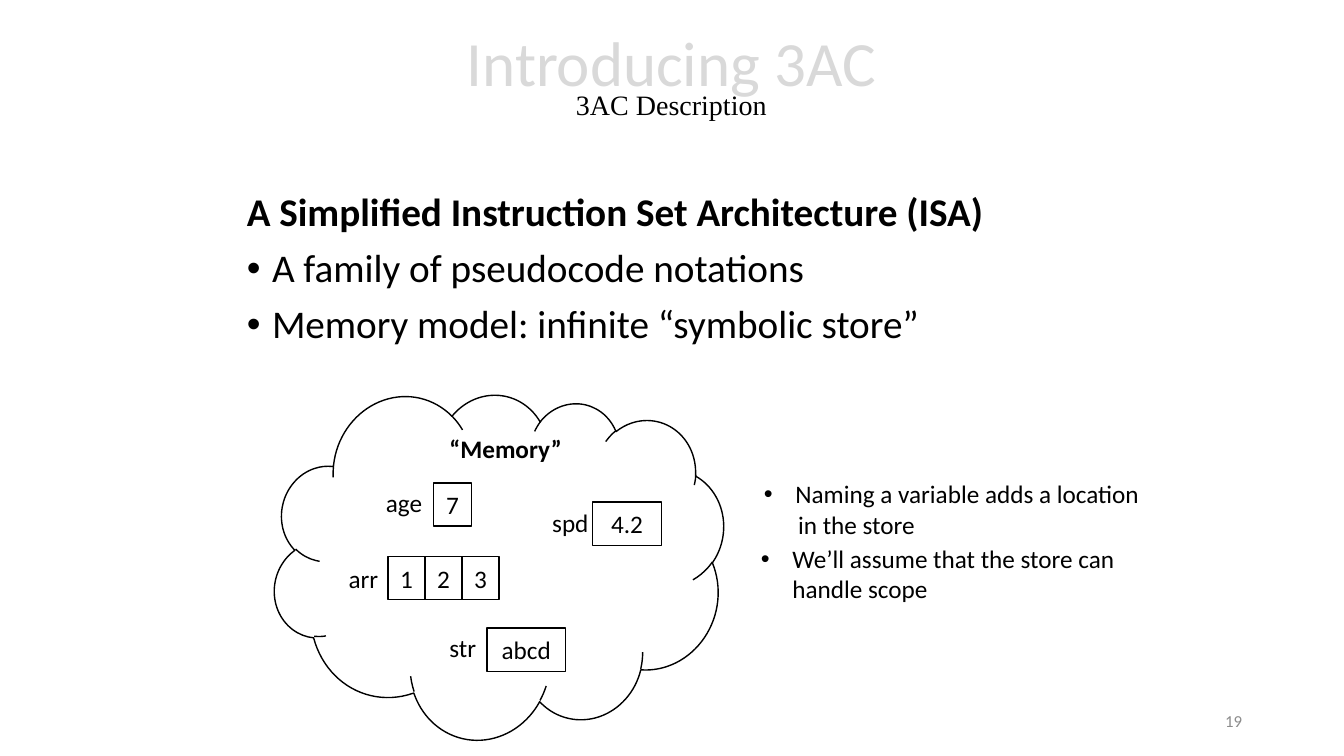
import pptx
import pptx.util
import pptx.dml.color
import pptx.enum.shapes
import pptx.enum.text
import lxml.etree

Pt = pptx.util.Pt
RGBColor = pptx.dml.color.RGBColor
SHAPE = pptx.enum.shapes.MSO_SHAPE
ALIGN = pptx.enum.text.PP_ALIGN
ANCHOR = pptx.enum.text.MSO_ANCHOR
FIT = pptx.enum.text.MSO_AUTO_SIZE

BLACK = RGBColor(0x00, 0x00, 0x00)
WHITE = RGBColor(0xFF, 0xFF, 0xFF)
TITLE_GREY = RGBColor(0xD9, 0xD9, 0xD9)
NUMBER_GREY = RGBColor(0x8C, 0x8C, 0x8C)
CELL = pptx.util.Inches(0.1)

prs = pptx.Presentation()
prs.slide_width = int(133.33 * CELL)
prs.slide_height = 75 * CELL
s = prs.slides.add_slide(prs.slide_layouts[6])


def add_box(cols, rows, width, height, shape=None, line=BLACK):
    at = [int(n * CELL) for n in (cols, rows, width, height)]
    if shape is None:
        sp = s.shapes.add_textbox(*at)
    else:
        sp = s.shapes.add_shape(shape, *at)
        sp.shadow.inherit = False
        sp.fill.solid()
        sp.fill.fore_color.rgb = WHITE
        sp.line.color.rgb = line
        sp.line.width = Pt(1)
        sp.text_frame.vertical_anchor = ANCHOR.MIDDLE
        sp.text_frame.paragraphs[0].alignment = ALIGN.CENTER
    sp.text_frame.word_wrap = True
    return sp


def add_run(p, text, size=18, color=BLACK, bold=False, font="Calibri", indent=0, bullet=False):
    r = p.add_run()
    r.text = text
    r.font.size = Pt(size)
    r.font.color.rgb = color
    r.font.bold = bold
    r.font.name = font
    if indent:
        pPr = p._p.get_or_add_pPr()
        pPr.set("marL", str(int(indent * CELL)))
        pPr.set("indent", str(int(-indent * CELL) if bullet else 0))
        if bullet:
            ns = "{http://schemas.openxmlformats.org/drawingml/2006/main}"
            lxml.etree.SubElement(pPr, ns + "buFont").set("typeface", "Arial")
            lxml.etree.SubElement(pPr, ns + "buChar").set("char", "•")


cloud = add_box(27.3, 38.5, 44.2, 35, SHAPE.CLOUD)
cloud.rotation = 13.1
add_box(57.3, 56.8, 9.5, 7.8, SHAPE.RECTANGLE, WHITE)

tf = add_box(23.5, 0.9, 86.2, 14.5).text_frame
tf.vertical_anchor = ANCHOR.MIDDLE
p = tf.paragraphs[0]
p.alignment = ALIGN.CENTER
p.line_spacing = 0.7
add_run(p, "Introducing 3AC", 45, TITLE_GREY)
p.add_line_break()
add_run(p, "3AC Description", 20, font="Times New Roman")

tf = add_box(23.5, 18.6, 86.2, 47.6).text_frame
points = [
    "A Simplified Instruction Set Architecture (ISA)",
    "A family of pseudocode notations",
    "Memory model: infinite “symbolic store”",
]
for i, text in enumerate(points):
    p = tf.add_paragraph() if i else tf.paragraphs[0]
    p.line_spacing = 0.9
    p.space_before = Pt(10)
    add_run(p, text, 28, bold=i == 0, indent=2.5 if i else 0, bullet=i > 0)

tf = add_box(94.2, 69.5, 30, 4).text_frame
tf.vertical_anchor = ANCHOR.MIDDLE
p = tf.paragraphs[0]
p.alignment = ALIGN.RIGHT
add_run(p, "19", 12, NUMBER_GREY)

labels = [
    ("“Memory”", 43.6, 42.5, 13.3),
    ("age", 37.3, 47.9, 5.7),
    ("str", 43.6, 62.2, 4.7),
    ("spd", 53.8, 49.8, 5.7),
    ("arr", 33.6, 55.4, 5),
]
variables = [
    (["7"], 43, 47.9, 3.8),
    (["abcd"], 48.3, 62.3, 7.8),
    (["4.2"], 58.8, 49.8, 6.8),
    (["1", "2", "3"], 38.5, 55.2, 3.67),
]
for values, col, row, width in variables:
    for i, value in enumerate(values):
        sp = add_box(col + i * width, row, width, 4.3, SHAPE.RECTANGLE)
        sp.text_frame.word_wrap = False
        add_run(sp.text_frame.paragraphs[0], value)
for text, col, row, width in labels:
    tf = add_box(col, row, width, 4).text_frame
    tf.word_wrap = False
    tf.auto_size = FIT.SHAPE_TO_FIT_TEXT
    add_run(tf.paragraphs[0], text, bold=text == "“Memory”")

tf = add_box(74.8, 47, 40.3, 7.1).text_frame
add_run(tf.paragraphs[0], "Naming a variable adds a location", indent=3.13, bullet=True)
add_run(tf.add_paragraph(), "in the store", indent=3.4)
tf = add_box(74.5, 53.4, 39.6, 7.1).text_frame
add_run(tf.paragraphs[0], "We’ll assume that the store can handle scope", indent=3.13, bullet=True)

prs.save("out.pptx")
